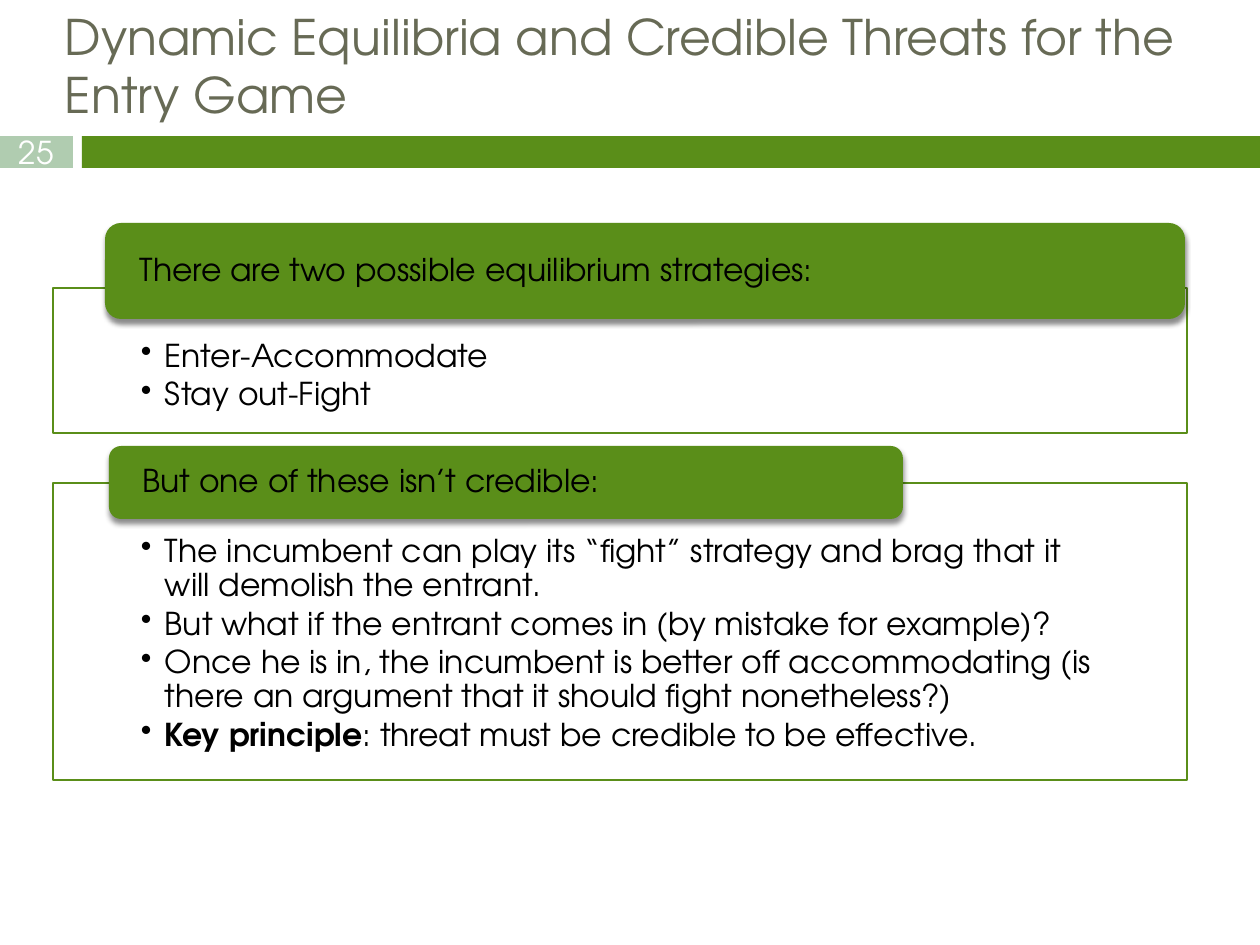
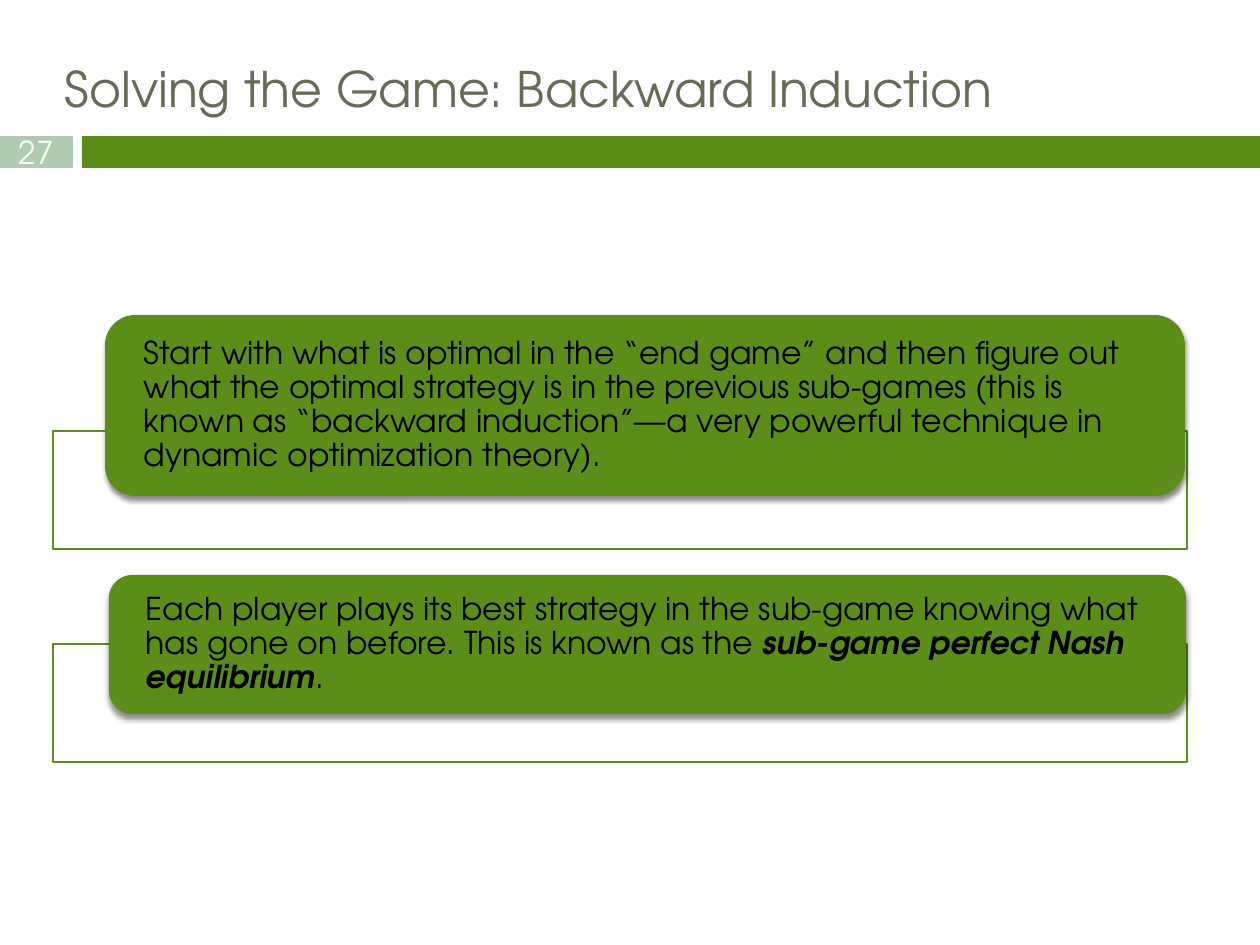
from dataclasses import dataclass
from typing import NamedTuple

from lxml import etree
from pptx import Presentation
from pptx.dml.color import RGBColor
from pptx.enum.shapes import MSO_SHAPE
from pptx.enum.text import MSO_ANCHOR, PP_ALIGN
from pptx.oxml.ns import qn
from pptx.util import Emu, Inches, Pt

RECTANGLE = MSO_SHAPE.RECTANGLE
ROUNDED = MSO_SHAPE.ROUNDED_RECTANGLE
TOP, MIDDLE = MSO_ANCHOR.TOP, MSO_ANCHOR.MIDDLE
LEFT, CENTER = PP_ALIGN.LEFT, PP_ALIGN.CENTER

PX_PER_INCH = 126
FONT = "TeX Gyre Adventor"
GREEN, SAGE, OLIVE = "5A8E19", "B0CCB0", "676A55"
WHITE, BLACK = "FFFFFF", "000000"

FRAME_LEFT, FRAME_WIDTH = 53, 1134
BULLET_INDENT = 24


class Box(NamedTuple):
    left: int
    top: int
    width: int
    height: int


class Insets(NamedTuple):
    left: int
    top: int
    right: int
    bottom: int


class Run(NamedTuple):
    text: str
    bold: bool = False
    italic: bool = False


Line = list[Run]


@dataclass
class TextStyle:
    size: int = 18
    color: str = BLACK
    align: PP_ALIGN = LEFT
    anchor: MSO_ANCHOR = MIDDLE
    insets: Insets = Insets(0, 0, 0, 0)
    line_spacing: float = 1.0
    space_after: float = 0
    bullets: bool = False


@dataclass
class Panel:
    """A green heading that overlaps the top edge of an outlined frame."""
    frame_top: int
    frame_height: int
    heading_box: Box
    heading: Line
    points: list[Line]


@dataclass
class Page:
    number: int
    title: str
    title_top: int
    panels: list[Panel]


TITLE = TextStyle(28, OLIVE, anchor=TOP, insets=Insets(12, 6, 12, 6))
PAGE_NUMBER = TextStyle(color=WHITE, align=CENTER)
HEADING = TextStyle(insets=Insets(30, 0, 30, 0), line_spacing=0.9)
POINTS = TextStyle(anchor=TOP, insets=Insets(88, 52, 88, 18),
                   line_spacing=0.9, space_after=2.7, bullets=True)

PAGES = [
    Page(25, "Dynamic Equilibria and Credible Threats for the Entry Game", 0, [
        Panel(288, 145, Box(105, 223, 1080, 96),
              [Run("There are two possible equilibrium strategies:")],
              [[Run("Enter-Accommodate")], [Run("Stay out-Fight")]]),
        Panel(483, 297, Box(109, 446, 794, 73),
              [Run("But one of these isn’t credible:")],
              [[Run("The incumbent can play its “fight” strategy and brag "
                    "that it will demolish the entrant.")],
               [Run("But what if the entrant comes in "
                    "(by mistake for example)?")],
               [Run("Once he is in, the incumbent is better off accommodating "
                    "(is there an argument that it should fight "
                    "nonetheless?)")],
               [Run("Key principle", bold=True),
                Run(": threat must be credible to be effective.")]]),
    ]),
    Page(27, "Solving the Game: Backward Induction", 53, [
        Panel(431, 118, Box(105, 315, 1080, 181),
              [Run("Start with what is optimal in the “end game” and then "
                   "figure out what the optimal strategy is in the previous "
                   "sub-games (this is known as “backward induction”—a very "
                   "powerful technique in dynamic optimization theory).")],
              []),
        Panel(644, 118, Box(109, 575, 1077, 139),
              [Run("Each player plays its best strategy in the sub-game "
                   "knowing what has gone on before. This is known as the "),
               Run("sub-game perfect Nash equilibrium", True, True),
               Run(".")],
              []),
    ]),
]


def px(length: int) -> Emu:
    return Emu(round(length * Inches(1) / PX_PER_INCH))


def color(value: str) -> RGBColor:
    return RGBColor.from_string(value)


def set_all(target, values: dict) -> None:
    for name, value in values.items():
        setattr(target, name, value)


def add_bullet(paragraph) -> None:
    properties = paragraph._p.get_or_add_pPr()
    properties.set("marL", str(px(BULLET_INDENT)))
    properties.set("indent", str(-px(BULLET_INDENT)))
    etree.SubElement(properties, qn("a:buChar"), char="•")


def write(shape, lines: list[Line], style: TextStyle) -> None:
    frame = shape.text_frame
    set_all(frame, {"word_wrap": True, "vertical_anchor": style.anchor})
    for side, inset in style.insets._asdict().items():
        setattr(frame, f"margin_{side}", px(inset))
    for index, line in enumerate(lines):
        paragraph = frame.add_paragraph() if index else frame.paragraphs[0]
        if style.bullets:
            add_bullet(paragraph)
        set_all(paragraph, {"alignment": style.align,
                            "line_spacing": style.line_spacing,
                            "space_after": Pt(style.space_after)})
        for part in line:
            run = paragraph.add_run()
            run.text = part.text
            set_all(run.font, {"name": FONT, "size": Pt(style.size),
                               "bold": part.bold, "italic": part.italic})
            run.font.color.rgb = color(style.color)


def add_block(slide, kind: MSO_SHAPE, box: Box, fill: str):
    """Add a filled shape with no outline and no shadow."""
    shape = slide.shapes.add_shape(kind, *map(px, box))
    shape.shadow.inherit = False
    shape.fill.solid()
    shape.fill.fore_color.rgb = color(fill)
    shape.line.fill.background()
    return shape


def add_soft_shadow(shape) -> None:
    effects = shape._element.spPr.find(qn("a:effectLst"))
    shadow = etree.SubElement(
        effects, qn("a:outerShdw"), blurRad=str(Pt(3)), dist=str(Pt(2.4)),
        dir="5400000", rotWithShape="0")
    tint = etree.SubElement(shadow, qn("a:srgbClr"), val=BLACK)
    etree.SubElement(tint, qn("a:alpha"), val="45000")


def add_panel(slide, panel: Panel) -> None:
    frame_box = Box(FRAME_LEFT, panel.frame_top, FRAME_WIDTH, panel.frame_height)
    frame = add_block(slide, RECTANGLE, frame_box, WHITE)
    fill_color = frame._element.spPr.find(qn("a:solidFill"))[0]
    etree.SubElement(fill_color, qn("a:alpha"), val="90000")
    frame.line.color.rgb = color(GREEN)
    frame.line.width = Pt(0.79)
    write(frame, panel.points, POINTS)

    heading = add_block(slide, ROUNDED, panel.heading_box, GREEN)
    add_soft_shadow(heading)
    write(heading, [panel.heading], HEADING)


def add_page(presentation, page: Page) -> None:
    slide = presentation.slides.add_slide(presentation.slide_layouts[6])
    add_block(slide, RECTANGLE, Box(82, 136, 1178, 32), GREEN)
    number = add_block(slide, RECTANGLE, Box(0, 136, 73, 32), SAGE)
    write(number, [[Run(str(page.number))]], PAGE_NUMBER)
    title_box = Box(FRAME_LEFT, page.title_top, 1197, 82)
    title = slide.shapes.add_textbox(*map(px, title_box))
    write(title, [[Run(page.title)]], TITLE)
    for panel in page.panels:
        add_panel(slide, panel)


def main() -> None:
    presentation = Presentation()
    set_all(presentation, {"slide_width": px(1260), "slide_height": px(945)})
    for page in PAGES:
        add_page(presentation, page)
    presentation.save("out.pptx")


if __name__ == "__main__":
    main()
